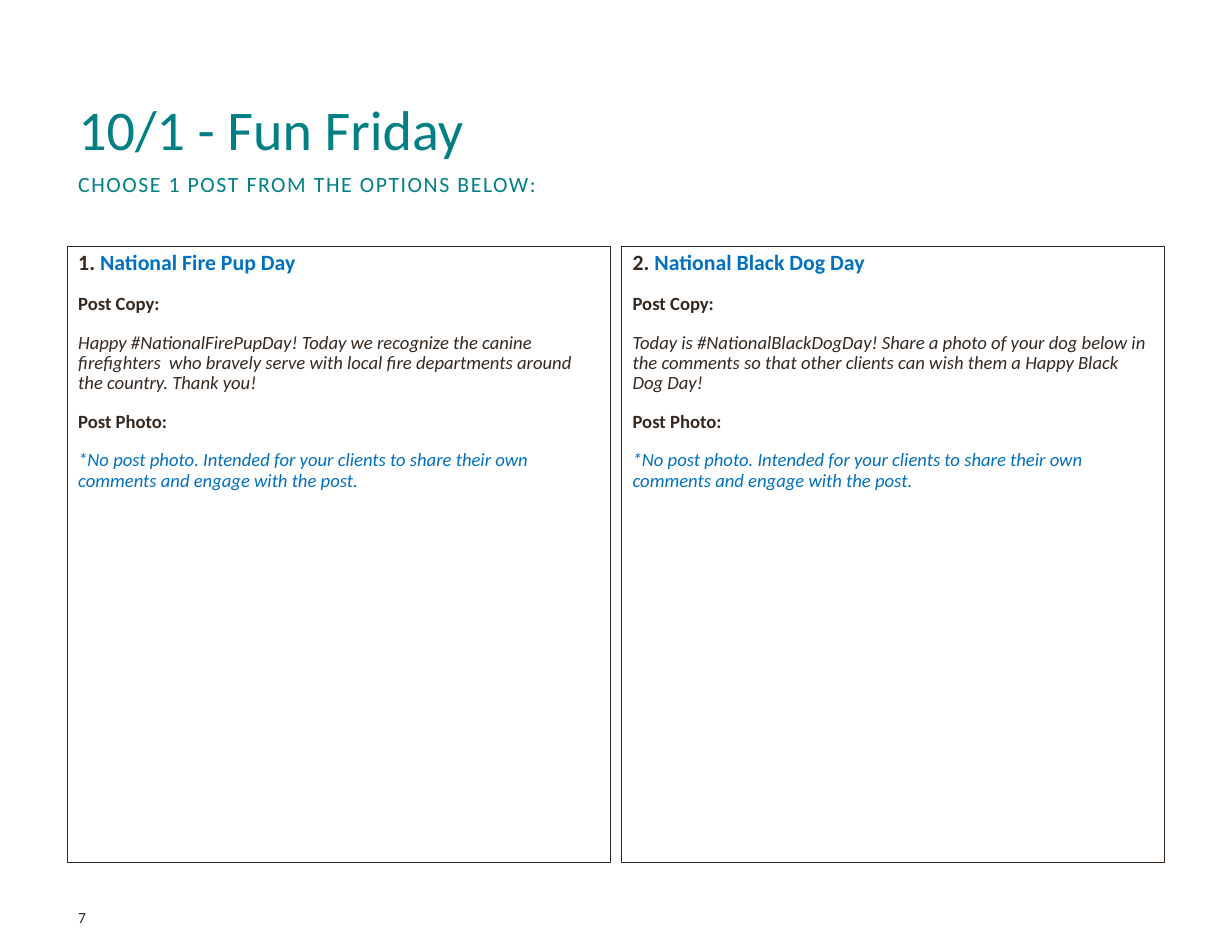
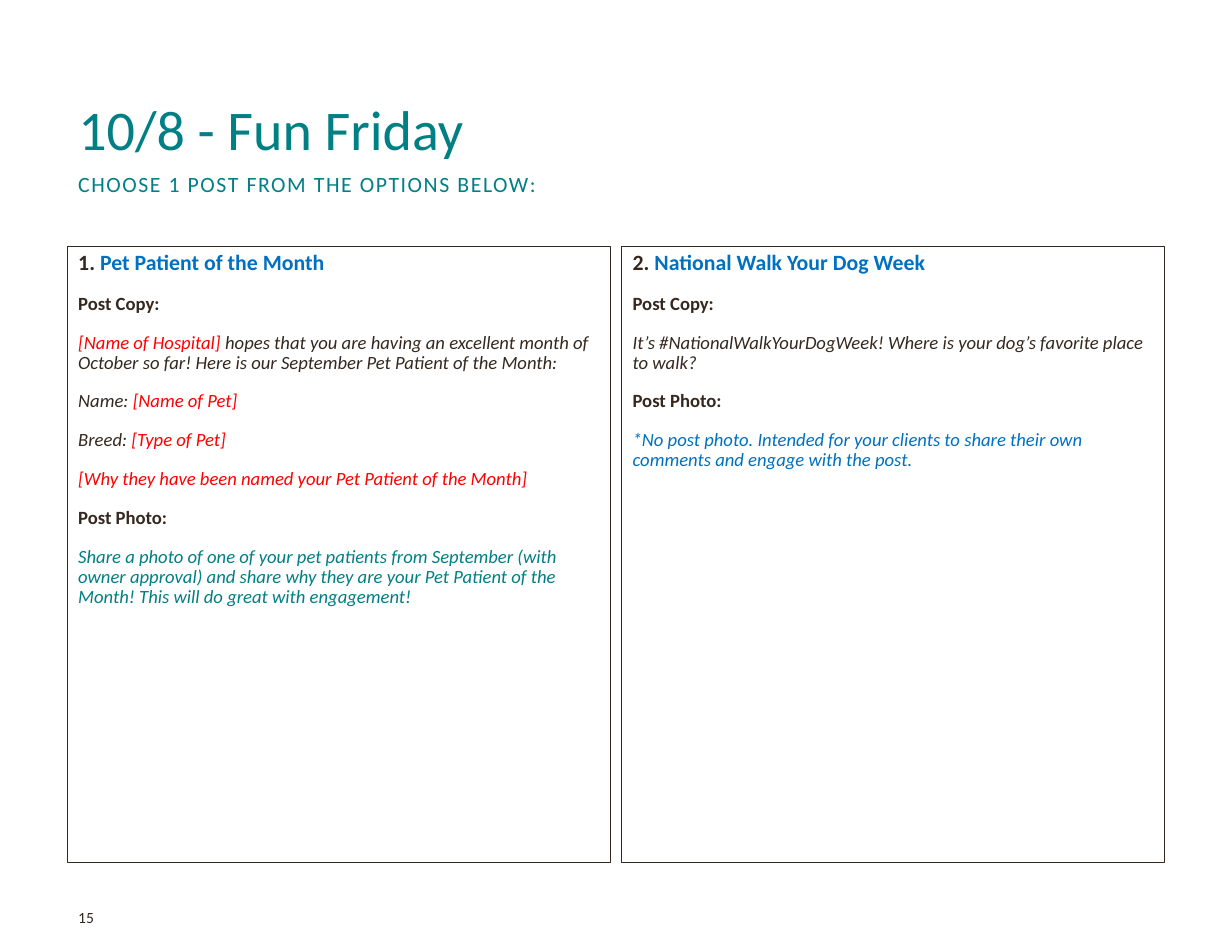
from dataclasses import dataclass
from typing import Any, NamedTuple

from pptx import Presentation
from pptx.dml.color import RGBColor
from pptx.enum import shapes, text
from pptx.util import Pt


@dataclass(frozen=True)
class Theme:
    font: str = "Calibri"
    ink: str = "35281F"
    teal: str = "007F85"
    blue: str = "0070C0"
    red: str = "FF0000"
    title_size: float = 36
    heading_size: float = 14
    body_size: float = 12
    number_size: float = 10
    border: float = 0.75
    line_spacing: float = 0.9
    paragraph_gap: float = 12
    tracking: float = 1


THEME = Theme()


class Area(NamedTuple):
    left: float
    top: float
    width: float
    height: float


class Span(NamedTuple):
    wording: str
    color: str = THEME.ink
    size: float = THEME.body_size
    bold: bool = False
    italic: bool = False
    tracking: float = 0


Line = list[Span]


@dataclass(frozen=True)
class Option:
    name: str
    post_copy: list[Line]
    photo: Span


@dataclass(frozen=True)
class Day:
    title: str
    page: int
    options: list[Option]


MARGIN = 43.2
CONTENT_WIDTH = 705.6
PANEL_GAP = 7.2
TITLE_AREA = Area(MARGIN, 36, CONTENT_WIDTH, 72)
PROMPT_AREA = Area(MARGIN, 108, CONTENT_WIDTH, 30.24)
OPTIONS_AREA = Area(MARGIN, 158.4, CONTENT_WIDTH, 396)
NUMBER_AREA = Area(MARGIN, 584.64, 178.56, 14.4)
PROMPT = "CHOOSE 1 POST FROM THE OPTIONS BELOW:"


def post(wording: str, color: str = THEME.ink) -> Span:
    return Span(wording, color, italic=True)


def blank(wording: str) -> Span:
    return post(wording, THEME.red)


NO_PHOTO = post(
    "*No post photo. Intended for your clients to share their own "
    "comments and engage with the post.", THEME.blue)

DAYS = [
    Day("10/1 - Fun Friday", 7, [
        Option("National Fire Pup Day", [[post(
            "Happy #NationalFirePupDay! Today we recognize the canine "
            "firefighters  who bravely serve with local fire departments "
            "around the country. Thank you!")]], NO_PHOTO),
        Option("National Black Dog Day", [[post(
            "Today is #NationalBlackDogDay! Share a photo of your dog below "
            "in the comments so that other clients can wish them a Happy "
            "Black Dog Day!")]], NO_PHOTO),
    ]),
    Day("10/8 - Fun Friday", 15, [
        Option("Pet Patient of the Month", [
            [blank("[Name of Hospital] "),
             post("hopes that you are having an excellent month of October "
                  "so far! Here is our September Pet Patient of the Month:")],
            [post("Name: "), blank("[Name of Pet]")],
            [post("Breed: "), blank("[Type of Pet]")],
            [blank("[Why they have been named your Pet Patient of the Month]")],
        ], post(
            "Share a photo of one of your pet patients from September (with "
            "owner approval) and share why they are your Pet Patient of the "
            "Month! This will do great with engagement!", THEME.teal)),
        Option("National Walk Your Dog Week", [[post(
            "It’s #NationalWalkYourDogWeek! Where is your dog’s favorite "
            "place to walk?")]], NO_PHOTO),
    ]),
]


def apply(target: Any, values: dict[str, Any]) -> None:
    for name, value in values.items():
        setattr(target, name, value)


def place(shape: Any, area: Area) -> None:
    apply(shape, {name: Pt(value) for name, value in area._asdict().items()})


def write(shape: Any, lines: list[Line], anchor: text.MSO_ANCHOR,
          line_spacing: float = THEME.line_spacing) -> None:
    frame = shape.text_frame
    apply(frame, {
        "word_wrap": True,
        "auto_size": text.MSO_AUTO_SIZE.NONE,
        "vertical_anchor": anchor,
    })
    for index, line in enumerate(lines):
        paragraph = frame.add_paragraph() if index else frame.paragraphs[0]
        apply(paragraph, {
            "alignment": text.PP_ALIGN.LEFT,
            "line_spacing": line_spacing,
            "space_before": Pt(THEME.paragraph_gap if index else 0),
        })
        for span in line:
            run = paragraph.add_run()
            run.text = span.wording
            apply(run.font, {
                "name": THEME.font,
                "size": Pt(span.size),
                "bold": span.bold,
                "italic": span.italic,
            })
            run.font.color.rgb = RGBColor.from_string(span.color)
            if span.tracking:
                run.font._element.set("spc", str(round(span.tracking * 100)))


def add_text(slide: Any, area: Area, span: Span, anchor: text.MSO_ANCHOR,
             line_spacing: float = THEME.line_spacing) -> None:
    box = slide.shapes.add_textbox(*map(Pt, area))
    write(box, [[span]], anchor, line_spacing)


def add_option(slide: Any, area: Area, number: int, option: Option) -> None:
    panel = slide.shapes.add_shape(shapes.MSO_SHAPE.RECTANGLE, *map(Pt, area))
    panel.shadow.inherit = False
    panel.fill.background()
    panel.line.color.rgb = RGBColor.from_string(THEME.ink)
    panel.line.width = Pt(THEME.border)
    heading = [
        Span(f"{number}. ", size=THEME.heading_size, bold=True),
        Span(option.name, THEME.blue, THEME.heading_size, bold=True),
    ]
    write(panel, [
        heading,
        [Span("Post Copy:", bold=True)],
        *option.post_copy,
        [Span("Post Photo:", bold=True)],
        [option.photo],
    ], text.MSO_ANCHOR.TOP)


def add_day(deck: Any, day: Day) -> None:
    slide = deck.slides.add_slide(deck.slide_layouts.get_by_name("Title Only"))
    title = slide.shapes.title
    place(title, TITLE_AREA)
    write(title, [[Span(day.title, THEME.teal, THEME.title_size)]],
          text.MSO_ANCHOR.BOTTOM)
    add_text(slide, PROMPT_AREA,
             Span(PROMPT, THEME.teal, THEME.heading_size,
                  tracking=THEME.tracking), text.MSO_ANCHOR.TOP)
    count = len(day.options)
    width = (OPTIONS_AREA.width - PANEL_GAP * (count - 1)) / count
    for index, option in enumerate(day.options):
        left = OPTIONS_AREA.left + index * (width + PANEL_GAP)
        add_option(slide, OPTIONS_AREA._replace(left=left, width=width),
                   index + 1, option)
    add_text(slide, NUMBER_AREA, Span(str(day.page), size=THEME.number_size),
             text.MSO_ANCHOR.BOTTOM, 1.0)


def main() -> None:
    deck = Presentation()
    apply(deck, {"slide_width": Pt(792), "slide_height": Pt(612)})
    for day in DAYS:
        add_day(deck, day)
    deck.save("out.pptx")


if __name__ == "__main__":
    main()
